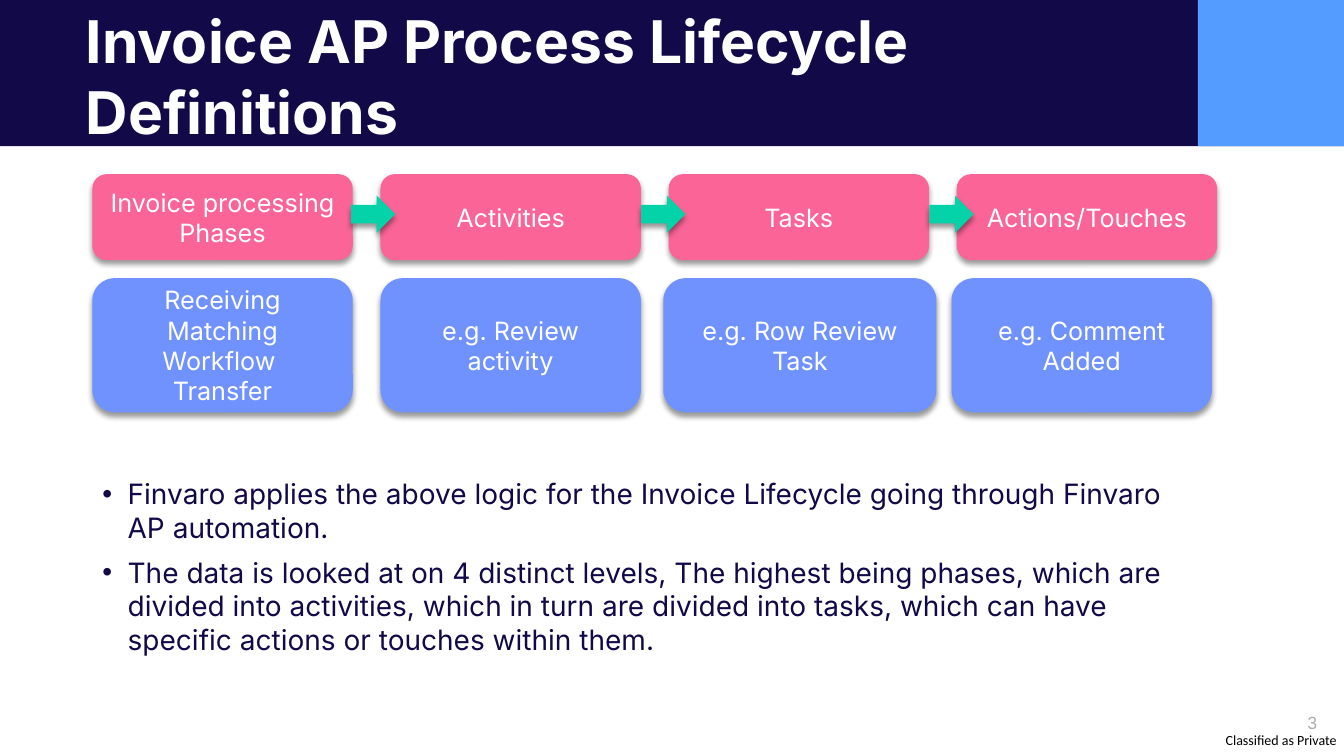
import pptx
import pptx.util
import pptx.dml.color
import pptx.enum.shapes
import pptx.enum.text
import lxml.etree

Pt = pptx.util.Pt
RGBColor = pptx.dml.color.RGBColor
KIND = pptx.enum.shapes.MSO_SHAPE
ALIGN = pptx.enum.text.PP_ALIGN
ANCHOR = pptx.enum.text.MSO_ANCHOR
FIT = pptx.enum.text.MSO_AUTO_SIZE

NAVY = RGBColor(0x12, 0x0A, 0x48)
SKY = RGBColor(0x54, 0x9C, 0xFF)
PINK = RGBColor(0xFA, 0x64, 0x96)
BLUE = RGBColor(0x70, 0x92, 0xFF)
GREEN = RGBColor(0x04, 0xD3, 0xAA)
GRAY = RGBColor(0xAD, 0xAD, 0xAD)
WHITE = RGBColor(0xFF, 0xFF, 0xFF)
BLACK = RGBColor(0, 0, 0)
NS = "http://schemas.openxmlformats.org/drawingml/2006/main"
SHADE = f"""<a:effectLst xmlns:a="{NS}">
<a:outerShdw blurRad="50800" dist="38100" dir="5400000" algn="t" rotWithShape="0">
<a:srgbClr val="000000"><a:alpha val="40000"/></a:srgbClr>
</a:outerShdw></a:effectLst>"""


def write(shape, text, size=18, color=WHITE, font="Inter", bold=False,
          align=ALIGN.LEFT, anchor=ANCHOR.TOP, wrap=True, bullet=False):
    frame = shape.text_frame
    frame.text = text
    frame.word_wrap = wrap
    frame.auto_size = FIT.NONE
    frame.vertical_anchor = anchor
    for i, para in enumerate(frame.paragraphs):
        para.alignment = align
        para.space_before = Pt(4 if bullet and i else 0)
        para.space_after = Pt(4 if bullet else 0)
        if bullet:
            props = para._p.get_or_add_pPr()
            props.set("marL", str(Pt(18)))
            props.set("indent", str(-Pt(18)))
            lxml.etree.SubElement(props, f"{{{NS}}}buChar", char="•")
        for run in para.runs:
            run.font.name = font
            run.font.size = Pt(size)
            run.font.bold = bold
            run.font.color.rgb = color


def draw(kind, box, fill, shade=True):
    shape = slide.shapes.add_shape(kind, *map(Pt, box))
    shape.fill.solid()
    shape.fill.fore_color.rgb = fill
    shape.line.fill.background()
    shape.shadow.inherit = False
    if shade:
        props = shape.element.spPr
        old = props.find(f"{{{NS}}}effectLst")
        props.replace(old, lxml.etree.fromstring(SHADE))
    return shape


deck = pptx.Presentation()
deck.slide_width = Pt(960)
deck.slide_height = Pt(540)
slide = deck.slides.add_slide(deck.slide_layouts[1])

title = slide.shapes.title
title.left, title.top, title.width, title.height = map(Pt, (54, 0, 749.5, 51))
write(title, "Invoice AP Process Lifecycle Definitions", size=42, bold=True)

for box, fill in (((0, 0, 960, 104.4), NAVY), ((855.6, 0, 104.4, 104.4), SKY)):
    band = draw(KIND.RECTANGLE, box, fill, shade=False)
    title.element.addprevious(band.element)

body = slide.placeholders[1]
body.left, body.top, body.width, body.height = map(Pt, (66, 337, 790, 160))
write(body, "Finvaro applies the above logic for the Invoice Lifecycle going "
      "through Finvaro AP automation.\n"
      "The data is looked at on 4 distinct levels, The highest being phases, "
      "which are divided into activities, which in turn are divided into tasks, "
      "which can have specific actions or touches within them.",
      size=20, color=NAVY, bullet=True)

levels = ("Invoice processing Phases", "Activities", "Tasks", "Actions/Touches")
for i, name in enumerate(levels):
    card = draw(KIND.ROUNDED_RECTANGLE, (66 + 205.8 * i, 124.4, 186, 61.4), PINK)
    write(card, name, align=ALIGN.CENTER, anchor=ANCHOR.MIDDLE)

for left in (250.6, 457.9, 663.8):
    draw(KIND.RIGHT_ARROW, (left, 139.7, 31.7, 26.6), GREEN)

samples = (
    ("Receiving Matching Workflow \vTransfer", 66, 186),
    ("e.g. Review activity", 271.8, 186),
    ("e.g. Row Review Task", 473.8, 195.1),
    ("e.g. Comment Added", 679.7, 186),
)
for name, left, width in samples:
    card = draw(KIND.ROUNDED_RECTANGLE, (left, 198.7, width, 95.8), BLUE)
    write(card, name, align=ALIGN.CENTER, anchor=ANCHOR.MIDDLE)

page = slide.shapes.add_textbox(Pt(856.8), Pt(505.4), Pt(91.4), Pt(21.6))
write(page, "3", size=12, color=GRAY, align=ALIGN.RIGHT)

label = slide.shapes.add_textbox(Pt(875.5), Pt(522.7), Pt(82.1), Pt(12.2))
frame = label.text_frame
frame.margin_left = frame.margin_right = frame.margin_top = frame.margin_bottom = 0
write(label, "Classified as Private", size=10, color=BLACK, font="Calibri", wrap=False)

deck.save("out.pptx")
